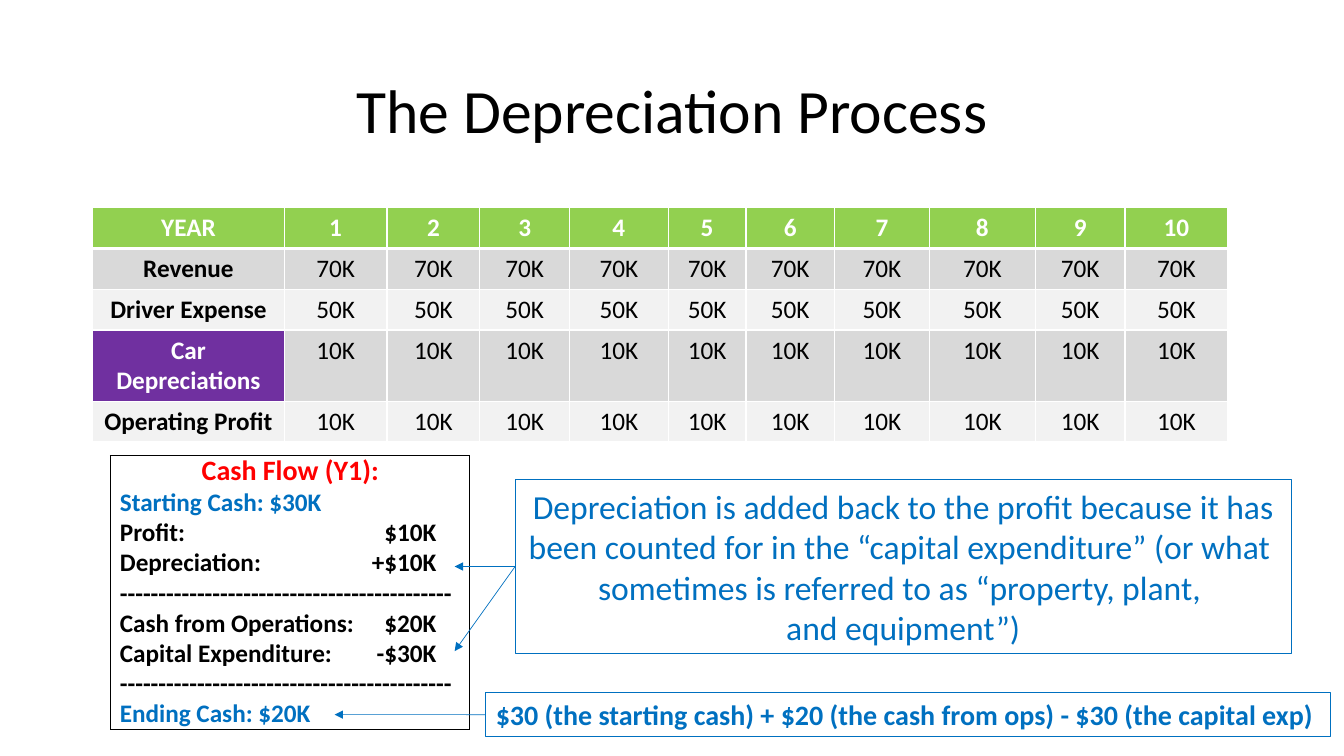
from dataclasses import dataclass

from lxml.etree import SubElement
from pptx import Presentation
from pptx.dml.color import RGBColor
from pptx.enum.shapes import MSO_CONNECTOR, MSO_SHAPE
from pptx.enum.text import MSO_ANCHOR, PP_ALIGN
from pptx.oxml import parse_xml
from pptx.oxml.ns import nsdecls, qn
from pptx.util import Inches, Pt


@dataclass(frozen=True)
class Theme:
    font: str = "Calibri"
    black: str = "000000"
    white: str = "FFFFFF"
    blue: str = "0070C0"
    red: str = "FF0000"
    green: str = "92D050"
    purple: str = "7030A0"
    bands: tuple = ("D9D9D9", "F2F2F2")
    title: int = 44
    callout: int = 24
    heading: int = 20
    body: int = 18
    thin: float = 0.5
    outline: float = 0.75
    cell_line: int = 1
    header_line: int = 3


def apply_format(target, values):
    for name, value in values.items():
        setattr(target, name, value)


class SlideBuilder:
    """Places elements on a grid of 100 columns by 100 rows."""

    def __init__(self, presentation, theme):
        self.theme = theme
        self.column = presentation.slide_width / 100
        self.row = presentation.slide_height / 100
        self.slide = presentation.slides.add_slide(presentation.slide_layouts[6])

    def place(self, left, top, width, height):
        return (round(left * self.column), round(top * self.row),
                round(width * self.column), round(height * self.row))

    def set_text(self, paragraph, text, size, color, bold=False, align=PP_ALIGN.LEFT):
        paragraph.text = text
        paragraph.alignment = align
        for run in paragraph.runs:
            apply_format(run.font, {"name": self.theme.font, "size": Pt(size), "bold": bold})
            run.font.color.rgb = RGBColor.from_string(color)

    def fill_frame(self, frame, lines, anchor):
        apply_format(frame, {"word_wrap": True, "vertical_anchor": anchor})
        for index, line in enumerate(lines):
            paragraph = frame.paragraphs[0] if index == 0 else frame.add_paragraph()
            self.set_text(paragraph, **line)
        return frame.paragraphs

    def text(self, area, lines, anchor=MSO_ANCHOR.TOP):
        shape = self.slide.shapes.add_textbox(*self.place(*area))
        return self.fill_frame(shape.text_frame, lines, anchor)

    def box(self, area, lines):
        shape = self.slide.shapes.add_shape(MSO_SHAPE.RECTANGLE, *self.place(*area))
        shape.shadow.inherit = False
        shape.fill.background()
        shape.line.color.rgb = RGBColor.from_string(self.theme.blue)
        shape.line.width = Pt(self.theme.outline)
        self.fill_frame(shape.text_frame, lines, MSO_ANCHOR.MIDDLE)
        return shape

    def line(self, start, end, color):
        connector = self.slide.shapes.add_connector(
            MSO_CONNECTOR.STRAIGHT, *self.place(*start, *end))
        connector.line.color.rgb = RGBColor.from_string(color)
        connector.line.width = Pt(self.theme.thin)
        SubElement(connector.element.spPr, qn("a:effectLst"))
        return connector

    def arrow(self, source, tip):
        connector = self.line(tip, tip, self.theme.blue)
        connector.begin_connect(source, 1)
        outline = connector.element.spPr.find(qn("a:ln"))
        SubElement(outline, qn("a:tailEnd"), type="triangle")

    def border_cell(self, cell, bottom):
        properties = cell._tc.get_or_add_tcPr()
        thin = self.theme.cell_line
        widths = {"lnL": thin, "lnR": thin, "lnT": thin, "lnB": bottom}
        for index, (side, width) in enumerate(widths.items()):
            properties.insert(index, parse_xml(
                f'<a:{side} {nsdecls("a")} w="{Pt(width)}"><a:solidFill>'
                f'<a:srgbClr val="{self.theme.white}"/></a:solidFill></a:{side}>'))

    def table(self, left, top, widths, heights, rows):
        theme = self.theme
        area = self.place(left, top, sum(widths), sum(heights))
        table = self.slide.shapes.add_table(len(rows), len(widths), *area).table
        for column, width in zip(table.columns, widths):
            column.width = round(width * self.column)
        for row, height in zip(table.rows, heights):
            row.height = round(height * self.row)
        for row_index, values in enumerate(rows):
            for column_index, value in enumerate(values):
                cell = table.cell(row_index, column_index)
                header, label = row_index == 0, column_index == 0
                fill, color = theme.bands[(row_index + 1) % 2], theme.black
                if header:
                    fill, color = theme.green, theme.white
                elif label and value == "Car Depreciations":
                    fill, color = theme.purple, theme.white
                cell.fill.solid()
                cell.fill.fore_color.rgb = RGBColor.from_string(fill)
                self.set_text(cell.text_frame.paragraphs[0], value, theme.body, color,
                              header or label, PP_ALIGN.CENTER)
                self.border_cell(cell, theme.header_line if header else theme.cell_line)


def right_tab(paragraph, position):
    tabs = SubElement(paragraph._p.get_or_add_pPr(), qn("a:tabLst"))
    SubElement(tabs, qn("a:tab"), pos=str(Inches(position)), algn="r")


def main():
    presentation = Presentation()
    apply_format(presentation, {"slide_width": Inches(13.33), "slide_height": Inches(7.5)})
    theme = Theme()
    builder = SlideBuilder(presentation, theme)

    # Title
    title = builder.text((6.9, 5.33, 86.25, 19.33), [
        {"text": "The Depreciation Process", "size": theme.title,
         "color": theme.black, "align": PP_ALIGN.CENTER}], MSO_ANCHOR.MIDDLE)
    title[0].line_spacing = 0.9

    # Ten-year table
    yearly = {"Revenue": "70K", "Driver Expense": "50K",
              "Car Depreciations": "10K", "Operating Profit": "10K"}
    rows = [["YEAR"] + [str(year) for year in range(1, 11)]]
    rows += [[label] + [amount] * 10 for label, amount in yearly.items()]
    widths = [14.25, 7.65, 6.9, 6.68, 7.35, 5.78, 6.6, 7.05, 7.88, 6.68, 7.65]
    builder.table(6.9, 27.47, widths, [5.4, 5.4, 5.4, 9.4, 5.4], rows)

    # Cash flow statement, with amounts on a right tab
    rule = "-" * 43
    entries = [("Starting Cash: $30K", theme.blue), ("Profit:\t$10K", theme.black),
               ("Depreciation:\t+$10K", theme.black), (rule, theme.black),
               ("Cash from Operations:\t$20K", theme.black),
               ("Capital Expenditure:\t-$30K", theme.black), (rule, theme.black),
               ("Ending Cash: $20K", theme.blue)]
    heading = {"text": "Cash Flow (Y1):", "size": theme.heading, "color": theme.red,
               "bold": True, "align": PP_ALIGN.CENTER}
    statement = builder.text((8.18, 59.2, 26.85, 40.8), [heading] + [
        {"text": text, "size": theme.body, "color": color, "bold": True}
        for text, color in entries])
    for paragraph, (text, _) in zip(statement[1:], entries):
        if "\t" in text:
            right_tab(paragraph, 3.14)

    # Statement frame
    left, top, right, bottom = 8.18, 60.27, 34.95, 96.53
    corners = [(left, top), (right, top), (right, bottom), (left, bottom)]
    for start, end in zip(corners, corners[1:] + corners[:1]):
        builder.line(start, end, theme.black)

    # Explanations and their arrows
    explanation = ["Depreciation is added back to the profit because it has",
                   "been counted for in the “capital expenditure” (or what \v"
                   "sometimes is referred to as “property, plant, \vand equipment”)"]
    addback = builder.box((38.33, 63.47, 57.75, 22.93), [
        {"text": text, "size": theme.callout, "color": theme.blue,
         "align": PP_ALIGN.CENTER} for text in explanation])
    ending = builder.box((36.15, 91.6, 62.85, 5.87), [
        {"text": "$30 (the starting cash) + $20 (the cash from ops) - $30 (the capital exp)",
         "size": theme.heading, "color": theme.blue, "bold": True}])
    for source, tip in [(addback, (33.83, 74.93)), (addback, (33.83, 86.13)),
                        (ending, (24.9, 94.53))]:
        builder.arrow(source, tip)

    presentation.save("out.pptx")


if __name__ == "__main__":
    main()
